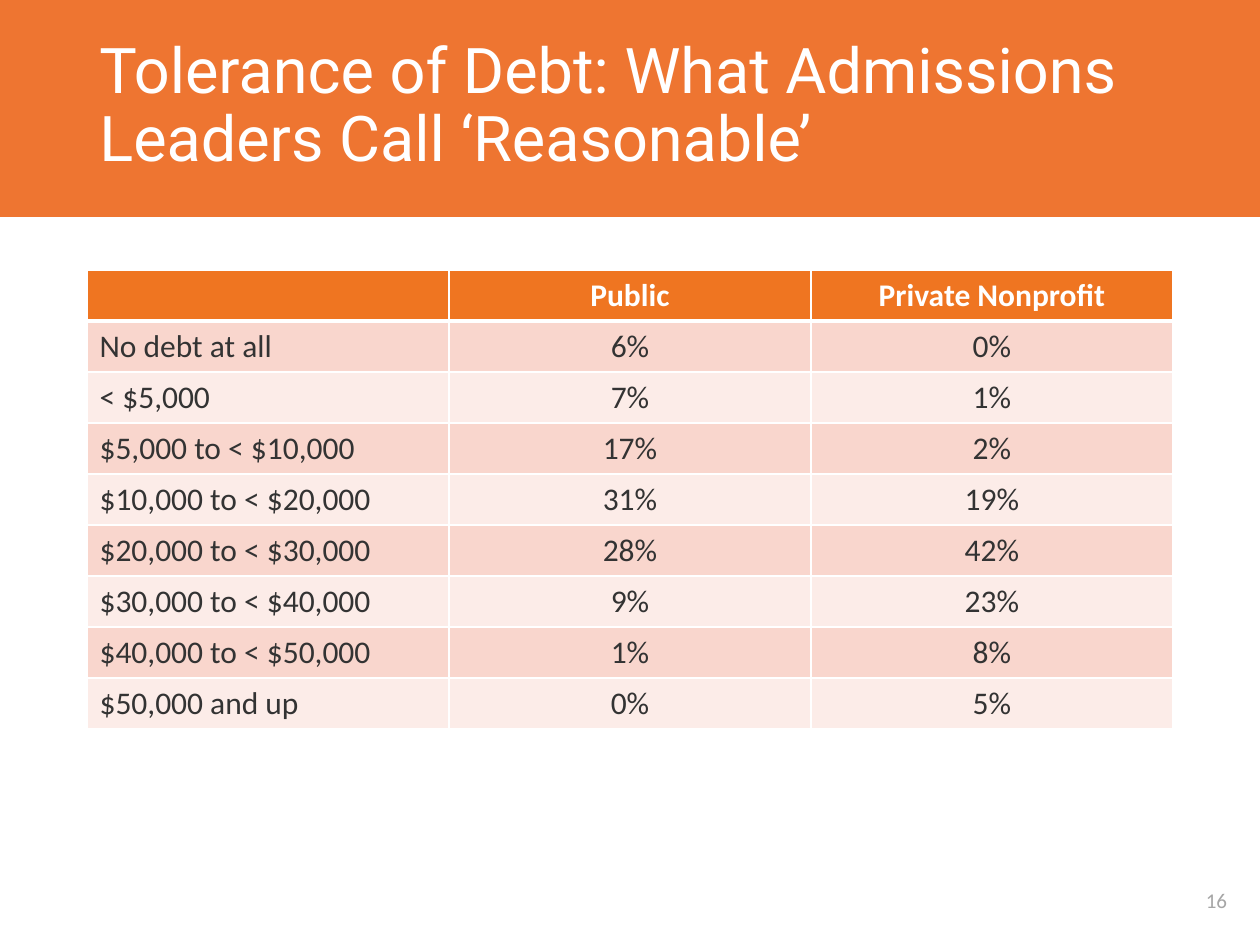
import pptx
import pptx.util
import pptx.dml.color
import pptx.enum.shapes
import pptx.enum.text
import pptx.oxml
import pptx.oxml.ns

# Content
TITLE = "Tolerance of Debt: What Admissions Leaders Call ‘Reasonable’"
NUMBER = "16"
ROWS = [
    ("", "Public", "Private Nonprofit"),
    ("No debt at all", "6%", "0%"),
    ("< $5,000", "7%", "1%"),
    ("$5,000 to < $10,000", "17%", "2%"),
    ("$10,000 to < $20,000", "31%", "19%"),
    ("$20,000 to < $30,000", "28%", "42%"),
    ("$30,000 to < $40,000", "9%", "23%"),
    ("$40,000 to < $50,000", "1%", "8%"),
    ("$50,000 and up", "0%", "5%"),
]
COLORS = {
    "banner": "EE7531", "head": "EF7521", "odd": "F9D6CD", "even": "FCECE8",
    "white": "FFFFFF", "ink": "333333", "gray": "A6A6A6",
}
LEFT, TOP, COL, ROW = 87, 270, 362, 51
ALIGN = pptx.enum.text.PP_ALIGN


def px(n):
    return round(n * 914400 / 126)


def rgb(name):
    return pptx.dml.color.RGBColor.from_string(COLORS[name])


def style(para, size, face, color, align=ALIGN.LEFT, bold=False):
    para.alignment = align
    font = para.font
    font.size, font.name, font.bold = pptx.util.Pt(size), face, bold
    font.color.rgb = rgb(color)


def label(slide, text, box, *look):
    frame = slide.shapes.add_textbox(*map(px, box)).text_frame
    frame.word_wrap = True
    frame.vertical_anchor = pptx.enum.text.MSO_ANCHOR.MIDDLE
    para = frame.paragraphs[0]
    para.text = text
    style(para, *look)
    return para


def border(cell, side, width):
    line = pptx.oxml.parse_xml(
        f'<a:{side} {pptx.oxml.ns.nsdecls("a")} w="{pptx.util.Pt(width)}">'
        f'<a:solidFill><a:srgbClr val="{COLORS["white"]}"/></a:solidFill></a:{side}>')
    return line


def paint(cell, fill, top, bottom):
    props = cell._tc.get_or_add_tcPr()
    for side, width in (("lnL", 1), ("lnR", 1), ("lnT", top), ("lnB", bottom)):
        props.append(border(cell, side, width))
    cell.fill.solid()
    cell.fill.fore_color.rgb = rgb(fill)


def main():
    deck = pptx.Presentation()
    deck.slide_width, deck.slide_height = px(1260), px(945)
    slide = deck.slides.add_slide(deck.slide_layouts[6])

    # Banner and title
    banner = slide.shapes.add_shape(
        pptx.enum.shapes.MSO_SHAPE.RECTANGLE, px(-1), 0, px(1262), px(217))
    banner.shadow.inherit = False
    banner.fill.solid()
    banner.fill.fore_color.rgb = rgb("banner")
    banner.line.fill.background()
    title = label(slide, TITLE, (LEFT, 0, 1086, 215), 36, "Roboto", "white")
    title.line_spacing = 0.9

    # Slide number
    label(slide, NUMBER, (1173, 876, 87, 49), 12, "Calibri", "gray", ALIGN.CENTER)

    # Debt table
    wide = len(ROWS[0])
    table = slide.shapes.add_table(
        len(ROWS), wide, px(LEFT), px(TOP), px(COL * wide), px(ROW * len(ROWS))).table
    for col in table.columns:
        col.width = px(COL)
    for r, row in enumerate(ROWS):
        table.rows[r].height = px(ROW)
        head = r == 0
        fill = "head" if head else "odd" if r % 2 else "even"
        for c, text in enumerate(row):
            cell = table.cell(r, c)
            paint(cell, fill, 3 if r == 1 else 1, 3 if head else 1)
            para = cell.text_frame.paragraphs[0]
            para.text = text
            style(para, 18, "Calibri", "white" if head else "ink",
                  ALIGN.CENTER if c else ALIGN.LEFT, head)

    deck.save("out.pptx")


if __name__ == "__main__":
    main()
